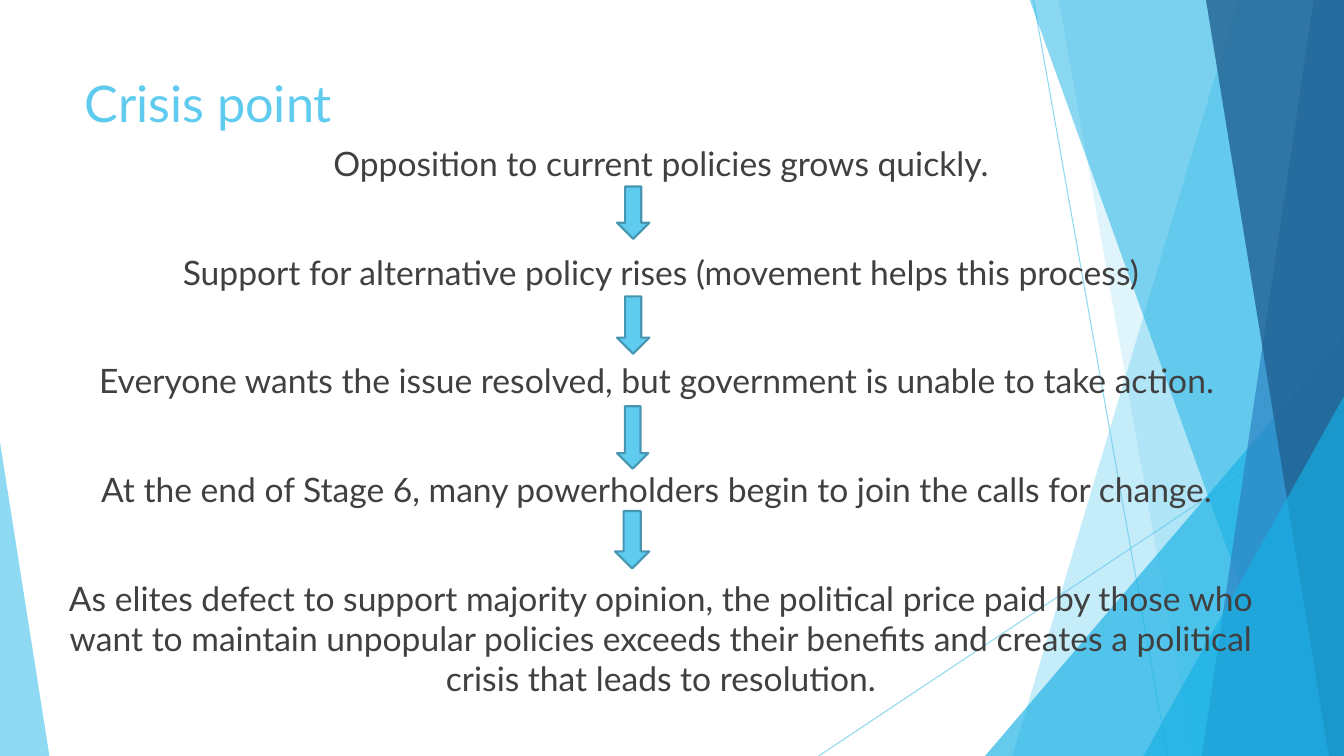
from lxml import etree
from pptx import Presentation
from pptx import util as u
from pptx.dml import color
from pptx.enum import shapes, text
from pptx.oxml import ns

COLORS = {
    "sky": "5FCBEF",
    "cyan": "17B0E4",
    "blue": "2E83C3",
    "navy": "226292",
    "edge": "4696B1",
    "text": "404040",
}
WIDTH, HEIGHT = 13.33, 7.5
TOP = -0.01

STEPS = [
    "Opposition to current policies grows quickly.",
    "Support for alternative policy rises (movement helps this process)",
    "Everyone wants the issue resolved, but government is unable to take action. ",
    "At the end of Stage 6, many powerholders begin to join the calls for change. ",
    "As elites defect to support majority opinion, the political price paid by those who "
    "want to maintain unpopular policies exceeds their benefits and creates a political "
    "crisis that leads to resolution.",
]
ARROWS = [
    (6.12, 1.85, 0.32, 0.52),
    (6.12, 2.94, 0.32, 0.57),
    (6.12, 4.03, 0.31, 0.62),
    (6.1, 5.07, 0.34, 0.57),
]


def rgb(name):
    return color.RGBColor.from_string(COLORS[name])


def set_alpha(sp, percent):
    clr = sp._element.spPr.find(".//" + ns.qn("a:srgbClr"))
    etree.SubElement(clr, ns.qn("a:alpha"), val=str(percent * 1000))


def paint(sp, fill, alpha=100, line=None):
    sp.shadow.inherit = False
    sp.fill.solid()
    sp.fill.fore_color.rgb = rgb(fill)
    if alpha < 100:
        set_alpha(sp, alpha)
    if line:
        sp.line.color.rgb = rgb(line)
        sp.line.width = u.Pt(1.5)
    else:
        sp.line.fill.background()


def add_ray(s, start, end):
    ln = s.shapes.add_connector(
        shapes.MSO_CONNECTOR.STRAIGHT, *(u.Inches(v) for v in start + end))
    ln.line.color.rgb = rgb("sky")
    ln.line.width = u.Pt(0.75)
    set_alpha(ln, 70)
    etree.SubElement(ln._element.spPr, ns.qn("a:effectLst"))


def add_band(s, top_x, bottom_x, fill, alpha):
    points = [(top_x, TOP), (WIDTH, TOP), (WIDTH, HEIGHT), (bottom_x, HEIGHT)]
    points = [(u.Inches(x), u.Inches(y)) for x, y in points]
    fb = s.shapes.build_freeform(*points[0])
    fb.add_line_segments(points[1:], close=True)
    paint(fb.convert_to_shape(), fill, alpha)


def add_triangle(s, box, apex, fill, alpha):
    sp = s.shapes.add_shape(
        shapes.MSO_SHAPE.ISOSCELES_TRIANGLE, *(u.Inches(v) for v in box))
    sp.adjustments[0] = apex
    paint(sp, fill, alpha)


def add_arrow(s, box):
    sp = s.shapes.add_shape(
        shapes.MSO_SHAPE.DOWN_ARROW, *(u.Inches(v) for v in box))
    paint(sp, "sky", line="edge")


def add_text(s, box, paragraphs, size, fill, align=text.PP_ALIGN.LEFT, gap=0):
    tf = s.shapes.add_textbox(*(u.Inches(v) for v in box)).text_frame
    tf.word_wrap = True
    for i, words in enumerate(paragraphs):
        p = tf.add_paragraph() if i else tf.paragraphs[0]
        p.alignment = align
        p.space_before = u.Pt(gap if i else 0)
        r = p.add_run()
        r.text = words
        r.font.name = "Lato"
        r.font.size = u.Pt(size)
        r.font.color.rgb = rgb(fill)


def add_backdrop(s):
    add_ray(s, (10.25, 0), (11.58, HEIGHT))
    add_ray(s, (WIDTH, 4.03), (8.12, HEIGHT))
    add_band(s, 12.28, 10.04, "sky", 36)
    add_band(s, 10.5, 11.83, "sky", 20)
    add_triangle(s, (9.77, 3.33, 3.56, 4.17), 1, "cyan", 66)
    add_band(s, 10.21, 12.91, "cyan", 50)
    add_band(s, 13.03, 11.92, "blue", 70)
    add_band(s, 11.96, 13.18, "navy", 80)
    add_triangle(s, (11.34, 3.93, 1.99, 3.57), 1, "cyan", 66)
    add_triangle(s, (0, 4.39, 0.49, 3.11), 0, "sky", 70)


def main():
    prs = Presentation()
    prs.slide_width = u.Inches(WIDTH)
    prs.slide_height = u.Inches(HEIGHT)
    s = prs.slides.add_slide(prs.slide_layouts[6])
    add_backdrop(s)
    add_text(s, (0.74, 0.67, 9.4, 1.44), ["Crisis point"], size=36, fill="sky")
    add_text(s, (0.37, 1.37, 12.37, 5.82), STEPS, size=24, fill="text",
             align=text.PP_ALIGN.CENTER, gap=48.8)
    for box in ARROWS:
        add_arrow(s, box)
    prs.save("out.pptx")


if __name__ == "__main__":
    main()
